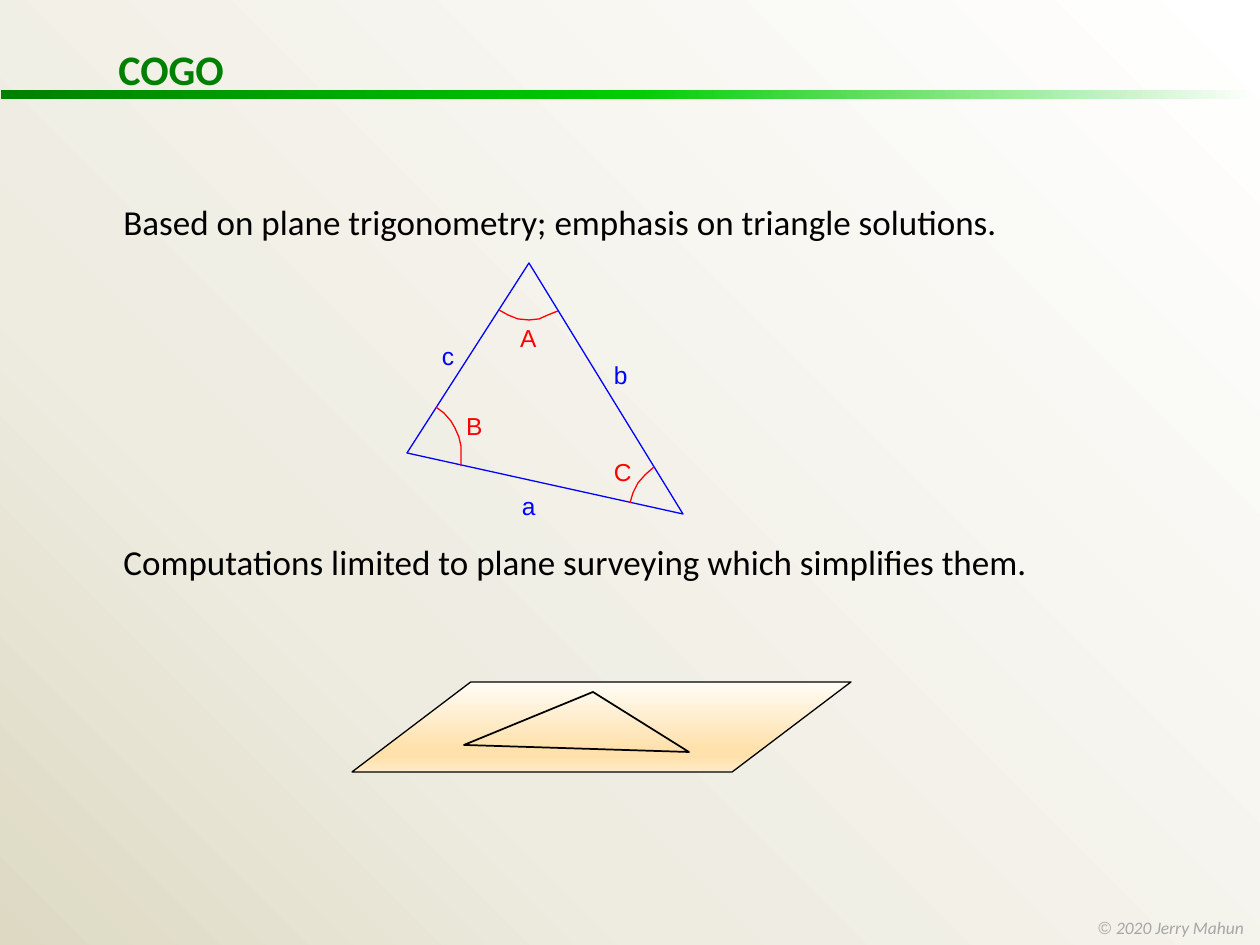
from pptx import Presentation
from pptx.dml.color import RGBColor
from pptx.enum.shapes import MSO_SHAPE
from pptx.oxml import parse_xml
from pptx.oxml.ns import nsdecls, qn
from pptx.util import Pt

EMU = 914400 / 126  # one px
GREEN = RGBColor(0x00, 0x80, 0x00)
LIME = RGBColor(0x00, 0xCC, 0x00)
WHITE = RGBColor(0xFF, 0xFF, 0xFF)
BLACK = RGBColor(0x00, 0x00, 0x00)
BLUE = RGBColor(0x00, 0x00, 0xFF)
RED = RGBColor(0xFF, 0x00, 0x00)
GRAY = RGBColor(0xA6, 0xA6, 0xA6)
CREAM = RGBColor(0xEE, 0xEC, 0xE1)
TAN = RGBColor(0xDD, 0xD9, 0xC3)
IVORY = RGBColor(0xFF, 0xFC, 0xF6)
PEACH = RGBColor(0xFF, 0xE1, 0xAC)
SAND = RGBColor(0xFF, 0xEB, 0xC8)


def px(*vals):
    return [round(v * EMU) for v in vals]


def blend(fill, props, stops, angle):
    """Swap a solid fill for a gradient of (percent, colour) stops."""
    fill.solid()
    marks = "".join(
        f'<a:gs pos="{pos * 1000}"><a:srgbClr val="{tone}"/></a:gs>'
        for pos, tone in stops)
    grad = parse_xml(
        f'<a:gradFill {nsdecls("a")} rotWithShape="1"><a:gsLst>{marks}</a:gsLst>'
        f'<a:lin ang="{angle * 60000}" scaled="0"/></a:gradFill>')
    props.replace(props.find(qn("a:solidFill")), grad)


def add_text(slide, box, lines, size, color, font="Calibri", wrap=True, inset=True):
    frame = slide.shapes.add_textbox(*px(*box)).text_frame
    frame.word_wrap = wrap
    if not inset:
        frame.margin_left = frame.margin_right = 0
        frame.margin_top = frame.margin_bottom = 0
    frame.text = "\n".join(lines)
    for para in frame.paragraphs:
        for run in para.runs:
            run.font.size = Pt(size)
            run.font.name = font
            run.font.color.rgb = color
    return frame


def add_path(slide, left, top, points, color, width, close=False):
    spots = [(left + x, top + y) for x, y in points]
    pen = slide.shapes.build_freeform(*spots[0], scale=EMU)
    pen.add_line_segments(spots[1:], close=close)
    shape = pen.convert_to_shape()
    shape.shadow.inherit = False
    shape.fill.background()
    shape.line.color.rgb = color
    shape.line.width = Pt(width)


def add_frame(slide, left, top, width, height):
    # Background
    back = slide.background.fill
    back.solid()
    blend(back, slide.element.cSld.bg.bgPr,
          [(0, WHITE), (70, CREAM), (100, TAN)], 135)
    # Footer
    box = (left + width - 174, top + height - 34, 174, 34)
    foot = add_text(slide, box, ["© "], 10, GRAY, "Arial", wrap=False)
    name = foot.paragraphs[0].add_run()
    name.text = "2020 Jerry Mahun"
    name.font.size = Pt(10)
    name.font.name = "Calibri"
    name.font.italic = True
    name.font.color.rgb = GRAY
    # Title rule
    bar = slide.shapes.add_shape(
        MSO_SHAPE.RECTANGLE, *px(left + 1, top + 90, width - 1, 9))
    bar.shadow.inherit = False
    bar.line.fill.background()
    blend(bar.fill, bar.element.spPr, [(0, GREEN), (50, LIME), (100, WHITE)], 0)
    # Title
    title = add_text(slide, (left + 106, top + 37, 606, 149), ["COGO"], 24, GREEN)
    title.paragraphs[0].runs[0].font.bold = True


def add_body(slide, left, top, width, height):
    lines = ["Based on plane trigonometry; emphasis on triangle solutions.",
             "Computations limited to plane surveying which simplifies them."]
    frame = add_text(slide, (left, top, width, height), lines, 20, BLACK)
    for para in frame.paragraphs:
        para.line_spacing = 0.9
    frame.paragraphs[1].space_before = Pt(173)


def add_plane(slide, left, top, width, height):
    plane = slide.shapes.add_shape(
        MSO_SHAPE.PARALLELOGRAM, *px(left, top, width, height))
    plane.adjustments[0] = 1.32
    plane.shadow.inherit = False
    plane.line.color.rgb = BLACK
    plane.line.width = Pt(0.75)
    blend(plane.fill, plane.element.spPr,
          [(0, IVORY), (74, PEACH), (83, PEACH), (100, SAND)], 90)
    add_path(slide, left, top, [(112, 63), (241, 10), (337, 70)], BLACK, 1, True)


def add_angles(slide, left, top, width, height):
    # Sides
    sides = [(0, 190), (122, 0), (width, height), (0, 190)]
    add_path(slide, left, top, sides, BLUE, 0)
    # Angle arcs
    arcs = [
        [(54, 203), (54, 193), (54, 183), (52, 174),
         (48, 165), (44, 158), (37, 150), (29, 144)],
        [(92, 47), (101, 52), (111, 56), (122, 57),
         (132, 56), (141, 52), (151, 48)],
        [(247, 204), (238, 212), (231, 220), (226, 230), (223, 240)],
    ]
    for arc in arcs:
        add_path(slide, left, top, arc, RED, 0)
    # Labels: capitals name angles, small letters name sides
    labels = [("B", 59, 148, 16), ("A", 113, 60, 16), ("C", 207, 194, 18),
              ("b", 207, 97, 14), ("a", 115, 228, 14), ("c", 35, 78, 13)]
    for label, x, y, wide in labels:
        add_text(slide, (left + x, top + y, wide, 30), [label], 14,
                 RED if label.isupper() else BLUE, "Arial", wrap=False, inset=False)


def main():
    deck = Presentation()
    deck.slide_width, deck.slide_height = px(1260, 945)
    slide = deck.slides.add_slide(deck.slide_layouts[6])
    add_frame(slide, 0, 0, 1260, 945)
    add_body(slide, 111, 199, 1125, 678)
    add_plane(slide, 352, 682, 499, 90)
    add_angles(slide, 407, 263, 276, 251)
    deck.save("out.pptx")


if __name__ == "__main__":
    main()
